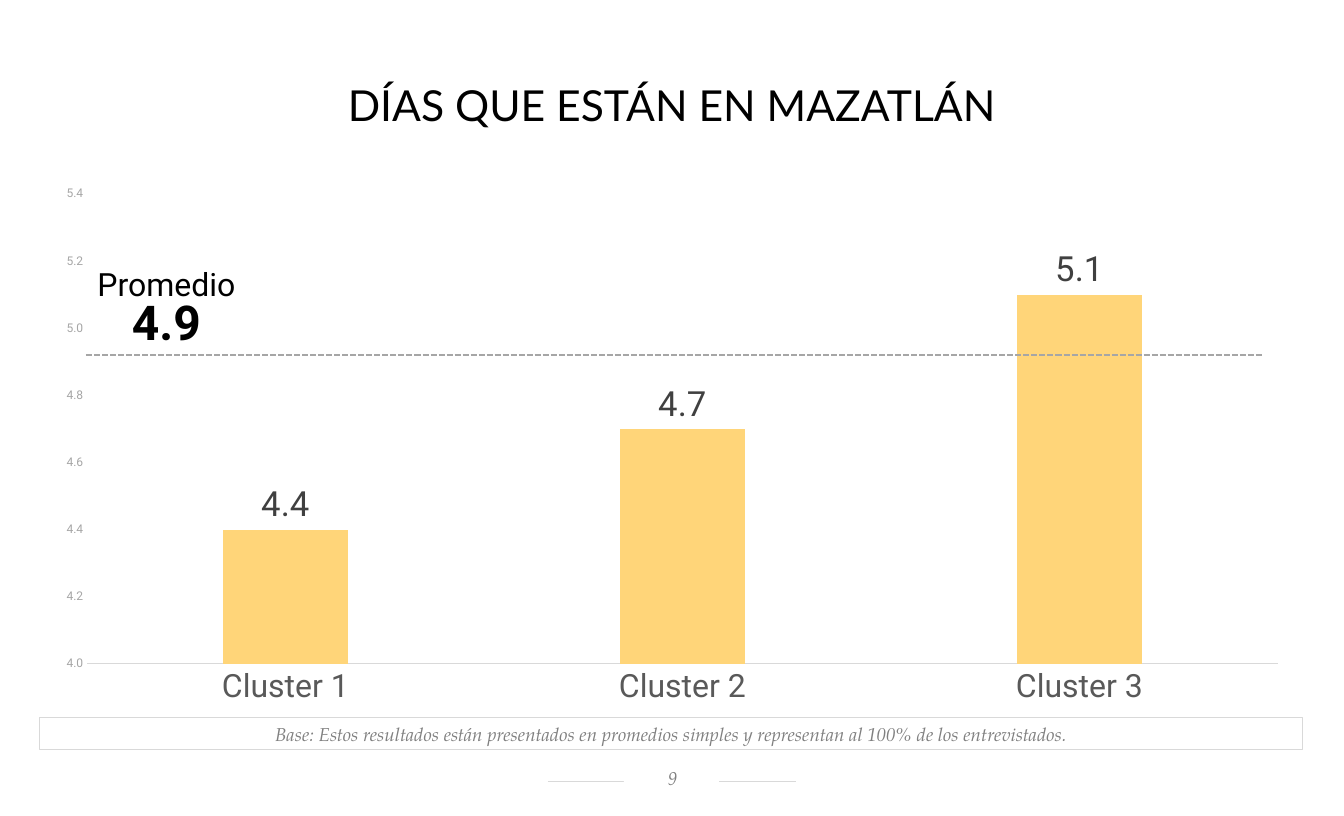
from lxml.etree import SubElement
from pptx import Presentation
from pptx.chart.data import CategoryChartData
from pptx.dml.color import RGBColor
from pptx.enum.chart import XL_CHART_TYPE, XL_LABEL_POSITION, XL_TICK_MARK
from pptx.enum.dml import MSO_LINE
from pptx.enum.shapes import MSO_CONNECTOR, MSO_SHAPE
from pptx.enum.text import MSO_ANCHOR, PP_ALIGN
from pptx.oxml.ns import qn
from pptx.util import Pt

PX = 9525  # EMU in one px
PALE, GREY, ASH = "D9D9D9", "A6A6A6", "808080"
NOTE = dict(name="TeX Gyre Pagella", size=Pt(14), italic=True, color=ASH)


def emu(*nums):
    return [n * PX for n in nums]


def rgb(hex):
    return RGBColor.from_string(hex)


def style(font, form):
    for key, val in form.items():
        if key == "color":
            font.color.rgb = rgb(val)
        else:
            setattr(font, key, val)


def stroke(line, color, width):
    line.color.rgb = rgb(color)
    line.width = Pt(width)


def write(frame, rows, pads, anchor=MSO_ANCHOR.TOP, lead=None):
    """Fill a frame with centred lines, each a (text, format) pair."""
    frame.word_wrap = True
    frame.vertical_anchor = anchor
    sides = ("left", "top", "right", "bottom")
    for side, pad in zip(sides, emu(*pads)):
        setattr(frame, "margin_" + side, pad)
    for i, (text, form) in enumerate(rows):
        para = frame.add_paragraph() if i else frame.paragraphs[0]
        para.alignment = PP_ALIGN.CENTER
        if lead:
            para.line_spacing = lead
        run = para.add_run()
        run.text = text
        style(run.font, form)


def rule(slide, x, y, wide, color, width, dash=None):
    line = slide.shapes.add_connector(
        MSO_CONNECTOR.STRAIGHT, *emu(x, y, x + wide, y))
    stroke(line.line, color, width)
    if dash:
        line.line.dash_style = dash
    SubElement(line._element.spPr, qn("a:effectLst"))


def panel(slide, box, text, pads, anchor, edge=None):
    shape = slide.shapes.add_shape(MSO_SHAPE.RECTANGLE, *emu(*box))
    shape.shadow.inherit = False
    shape.fill.solid()
    shape.fill.fore_color.rgb = rgb("FFFFFF")
    if edge:
        stroke(shape.line, edge, 0.75)
    else:
        shape.line.fill.background()
    write(shape.text_frame, [(text, NOTE)], pads, anchor)


def heading(slide, box, text):
    title = slide.shapes.title
    title.left, title.top, title.width, title.height = emu(*box)
    form = dict(name="Lato", size=Pt(32), color="000000")
    write(title.text_frame, [(text, form)], (13, 7, 13, 7), lead=0.8)


def place(chart, box, plot):
    """Pin the inner plot area to a px box inside the chart's box."""
    area = chart._chartSpace.chart.plotArea
    for old in area.findall(qn("c:layout")):
        area.remove(old)
    layout = SubElement(area, qn("c:layout"))
    area.insert(0, layout)
    manual = SubElement(layout, qn("c:manualLayout"))
    x, y, w, h = box
    left, top, wide, high = plot
    vals = dict(layoutTarget="inner", xMode="edge", yMode="edge",
                x=left / w, y=top / h, w=wide / w, h=high / h)
    for key, val in vals.items():
        SubElement(manual, qn("c:" + key)).set("val", str(val))


def columns(slide, box, names, vals):
    data = CategoryChartData(number_format="0.0")
    data.categories = names
    data.add_series("Series 1", vals)
    chart = slide.shapes.add_chart(
        XL_CHART_TYPE.COLUMN_CLUSTERED, *emu(*box), data).chart
    chart.has_legend = chart.has_title = False
    style(chart.font, dict(name="Roboto", size=Pt(10), color="000000"))
    place(chart, box, (47, 17, 1191, 470))

    # Axes
    cat, val = chart.category_axis, chart.value_axis
    for axis, size, color in ((cat, 24, "595959"), (val, 9, GREY)):
        axis.has_major_gridlines = False
        axis.major_tick_mark = axis.minor_tick_mark = XL_TICK_MARK.NONE
        style(axis.tick_labels.font,
              dict(name="Roboto", size=Pt(size), color=color))
    stroke(cat.format.line, PALE, 0.75)
    val.format.line.fill.background()
    scale = dict(minimum_scale=4, maximum_scale=5.4, major_unit=0.2)
    for key, num in scale.items():
        setattr(val, key, num)
    val.tick_labels.number_format = "0.0"
    val.tick_labels.number_format_is_linked = False

    # Bars and their labels
    plot = chart.plots[0]
    plot.gap_width, plot.overlap = 219, -27
    plot.vary_by_categories = False
    bars = plot.series[0].format.fill
    bars.solid()
    bars.fore_color.rgb = rgb("FFD579")
    plot.has_data_labels = True
    form = dict(show_value=True, number_format="0.0",
                number_format_is_linked=False,
                position=XL_LABEL_POSITION.OUTSIDE_END)
    for key, num in form.items():
        setattr(plot.data_labels, key, num)
    style(plot.data_labels.font,
          dict(name="Roboto", size=Pt(26), color="404040"))


def mean(slide, box, value):
    """Average line with its caption resting on it."""
    x, y, w, h = box
    rule(slide, x, y + h, w, GREY, 1.5, MSO_LINE.SQUARE_DOT)
    text = slide.shapes.add_textbox(*emu(x, y, 161, h))
    form = dict(name="Roboto", color="000000")
    rows = [("Promedio", dict(form, size=Pt(24))),
            (value, dict(form, size=Pt(36), bold=True))]
    write(text.text_frame, rows, (10, 5, 10, 5), lead=0.81)


def footer(slide, box, number):
    """Page number set in a gap of a thin line."""
    x, y, w, h = box
    rule(slide, x, y + 15, w, PALE, 0.5)
    gap = 95
    panel(slide, (x + (w - gap) // 2, y, gap, h), number,
          (12, 2, 10, 5), MSO_ANCHOR.MIDDLE)


def main():
    deck = Presentation()
    deck.slide_width, deck.slide_height = emu(1344, 816)
    slide = deck.slides.add_slide(deck.slide_layouts[5])
    heading(slide, (0, 82, 1344, 55), "DÍAS QUE ESTÁN EN MAZATLÁN")
    columns(slide, (40, 177, 1263, 540),
            [f"Cluster {n}" for n in (1, 2, 3)], (4.4, 4.7, 5.1))
    footer(slide, (548, 766, 248, 28), "9")
    panel(slide, (40, 717, 1263, 33),
          "Base: Estos resultados están presentados en promedios simples "
          "y representan al 100% de los entrevistados.",
          (10, 5, 10, 5), MSO_ANCHOR.BOTTOM, PALE)
    mean(slide, (86, 267, 1177, 88), "4.9")
    deck.save("out.pptx")


if __name__ == "__main__":
    main()
